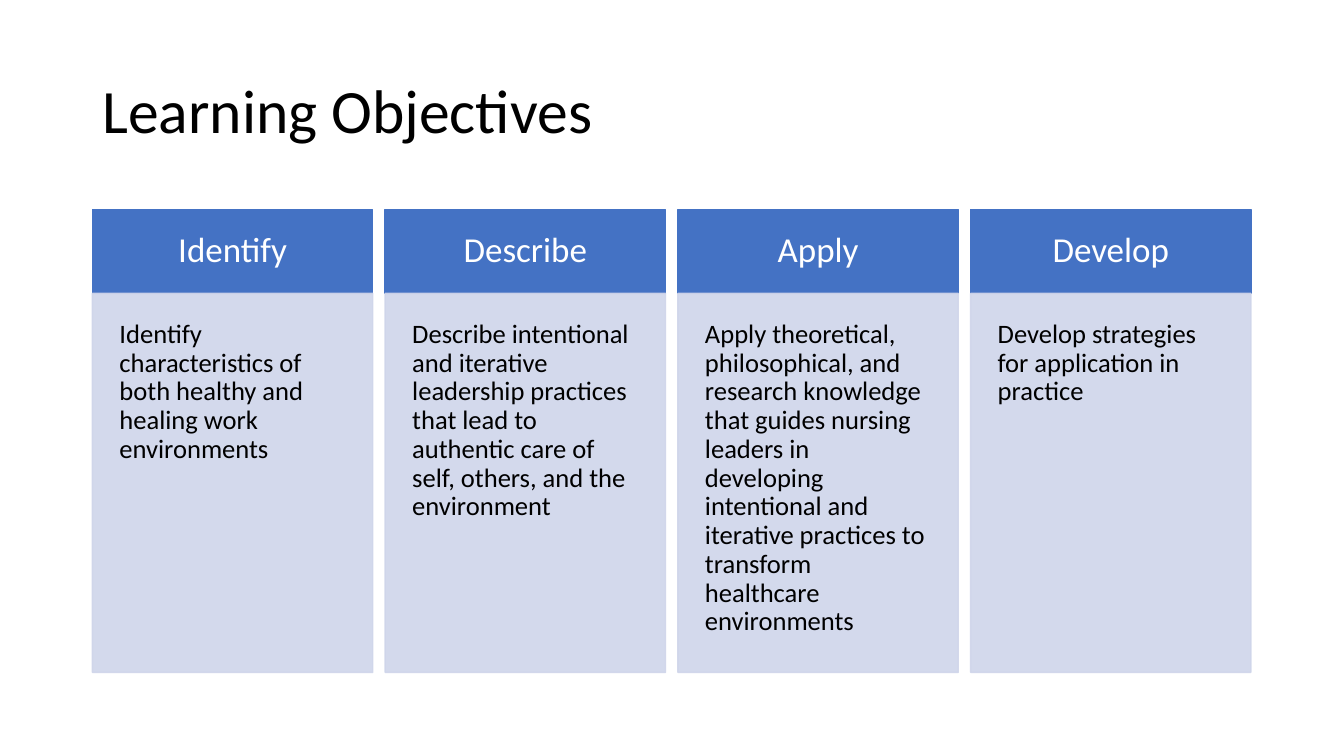
from dataclasses import dataclass

from lxml.etree import SubElement
from pptx import Presentation
from pptx.dml.color import RGBColor
from pptx.dml.fill import FillFormat
from pptx.enum.shapes import MSO_SHAPE
from pptx.enum.text import MSO_ANCHOR, PP_ALIGN
from pptx.oxml.ns import qn
from pptx.slide import Slide
from pptx.text.text import TextFrame
from pptx.util import Pt


@dataclass(frozen=True)
class BoxStyle:
    top: float
    height: float
    fill: str
    opacity: int
    inset: float
    size: float
    color: str
    align: PP_ALIGN
    anchor: MSO_ANCHOR


@dataclass(frozen=True)
class Objective:
    heading: str
    detail: str


FONT = "Calibri"
LEFT, WIDTH, PITCH = 66, 200.3, 209.1
HEADER = BoxStyle(149.8, 59.8, "4472C4", 100, 16, 25, "FFFFFF",
                  PP_ALIGN.CENTER, MSO_ANCHOR.MIDDLE)
BODY = BoxStyle(209.6, 270.7, "CFD5EA", 90, 19.4, 19, "000000",
                PP_ALIGN.LEFT, MSO_ANCHOR.TOP)

OBJECTIVES = [
    Objective("Identify", "Identify characteristics of both healthy and "
              "healing work environments"),
    Objective("Describe", "Describe intentional and iterative leadership "
              "practices that lead to authentic care of self, others, and "
              "the environment"),
    Objective("Apply", "Apply theoretical, philosophical, and research "
              "knowledge that guides nursing leaders in developing "
              "intentional and iterative practices to transform healthcare "
              "environments"),
    Objective("Develop", "Develop strategies for application in practice"),
]


def rgb(value: str) -> RGBColor:
    return RGBColor.from_string(value)


def paint(fill: FillFormat, color: str) -> None:
    fill.solid()
    fill.fore_color.rgb = rgb(color)


def write(tf: TextFrame, text: str, size: float, color: str,
          align: PP_ALIGN, anchor: MSO_ANCHOR, inset: float = 7.2) -> None:
    frame_format = {
        "word_wrap": True,
        "vertical_anchor": anchor,
        "margin_left": Pt(inset),
        "margin_right": Pt(inset),
        "margin_top": Pt(inset),
        "margin_bottom": Pt(inset),
    }
    for name, value in frame_format.items():
        setattr(tf, name, value)
    p = tf.paragraphs[0]
    p.alignment = align
    p.line_spacing = 0.9
    r = p.add_run()
    r.text = text
    for name, value in {"name": FONT, "size": Pt(size)}.items():
        setattr(r.font, name, value)
    r.font.color.rgb = rgb(color)


def add_box(s: Slide, left: float, text: str, style: BoxStyle) -> None:
    sp = s.shapes.add_shape(MSO_SHAPE.RECTANGLE, Pt(left), Pt(style.top),
                            Pt(WIDTH), Pt(style.height))
    sp.shadow.inherit = False
    sp.line.width = Pt(1)
    for fill in (sp.fill, sp.line.fill):
        paint(fill, style.fill)
    if style.opacity < 100:
        for color in sp.fill._xPr.iter(qn("a:srgbClr")):
            SubElement(color, qn("a:alpha"), val=str(style.opacity * 1000))
    write(sp.text_frame, text, style.size, style.color, style.align,
          style.anchor, style.inset)


def main() -> None:
    prs = Presentation()
    prs.slide_width, prs.slide_height = Pt(960), Pt(540)
    s = prs.slides.add_slide(prs.slide_layouts[5])

    # Title
    title = s.shapes.title
    place = {"left": 66, "top": 28.8, "width": 828, "height": 104.4}
    for name, value in place.items():
        setattr(title, name, Pt(value))
    write(title.text_frame, "Learning Objectives", 44, "000000",
          PP_ALIGN.LEFT, MSO_ANCHOR.MIDDLE)

    # Objective columns
    for i, objective in enumerate(OBJECTIVES):
        left = LEFT + i * PITCH
        add_box(s, left, objective.heading, HEADER)
        add_box(s, left, objective.detail, BODY)

    prs.save("out.pptx")


if __name__ == "__main__":
    main()
